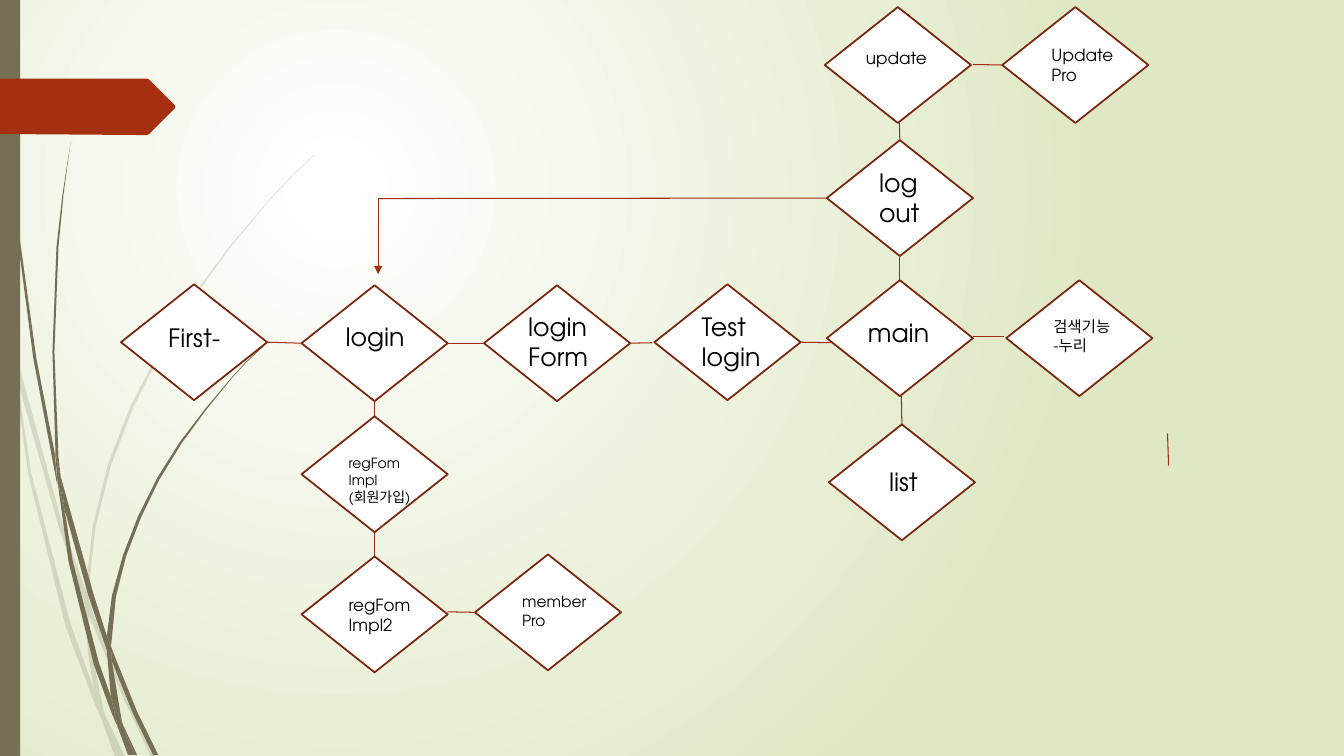
from lxml import etree
from pptx import Presentation
from pptx.dml.color import RGBColor
from pptx.enum.shapes import MSO_CONNECTOR, MSO_SHAPE
from pptx.enum.text import MSO_AUTO_SIZE
from pptx.oxml.ns import qn
from pptx.util import Inches, Pt

DIAMOND = MSO_SHAPE.FLOWCHART_DECISION
BAR = MSO_SHAPE.RECTANGLE
STRAIGHT = MSO_CONNECTOR.STRAIGHT
GROW = MSO_AUTO_SIZE.SHAPE_TO_FIT_TEXT
TOP, LEFT, BOTTOM, RIGHT = range(4)
FONT = "TeX Gyre Adventor"
OLIVE = "766F54"


def paint(color_format, hex_color):
    color_format.rgb = RGBColor.from_string(hex_color)


def fill_outline(points, hex_color):
    """Draw a closed, borderless outline through points given in inches."""
    corners = [(Inches(x), Inches(y)) for x, y in points]
    builder = slide.shapes.build_freeform(*corners[0])
    builder.add_line_segments(corners[1:], close=True)
    outline = builder.convert_to_shape()
    outline.shadow.inherit = False
    outline.fill.solid()
    paint(outline.fill.fore_color, hex_color)
    outline.line.fill.background()
    return outline


prs = Presentation()
prs.slide_width, prs.slide_height = Inches(13.33), Inches(7.5)
slide = prs.slides.add_slide(prs.slide_layouts[6])

# Background: radial gradient centred in the upper left
backdrop = slide.background.fill
backdrop.gradient()
for stop, hex_color in zip(backdrop.gradient_stops, ("FFFFFF", "DFE8C4")):
    paint(stop.color, hex_color)
gradient = slide.background._cSld.find(".//" + qn("a:gradFill"))
gradient.remove(gradient.find(qn("a:lin")))
radial = etree.SubElement(gradient, qn("a:path"), path="circle")
etree.SubElement(radial, qn("a:fillToRect"), l="50000", t="50000", r="100000", b="100000")

# Grass: each blade is a closed run of (x, y) points
pale_blades = [
    [(0.11, 3.5), (0.09, 3.22), (0, 2.82), (0, 2.99), (0.1, 3.44)],
    [(0.58, 5.22), (0.84, 5.99), (0.85, 5.86), (0.62, 5.2), (0.14, 3.45), (0.17, 3.76)],
    [(0.92, 6.07), (0.88, 5.96), (0.88, 6.1), (1.23, 6.94), (1.5, 7.51), (1.55, 7.51),
     (1.27, 6.92)],
    [(1.19, 7.51), (1.24, 7.51), (1.05, 7.11)],
    [(0.93, 6.83), (0.7, 6.19), (0.31, 4.69), (0.17, 3.76), (0.11, 3.5), (0.28, 4.7),
     (0.65, 6.21), (0.92, 6.93), (1.01, 7.14), (0.99, 7.07)],
    [(0.84, 5.99), (0.87, 6.46), (0.93, 6.83), (0.96, 6.92), (1.05, 7.11), (1.03, 7.06),
     (0.91, 6.46), (0.88, 6.1), (0.88, 6.08)],
    [(0.88, 5.84), (0.95, 5.22), (1.1, 4.62), (1.32, 4.05), (1.6, 3.49), (1.92, 2.96),
     (2.29, 2.45), (2.68, 1.98), (2.9, 1.75), (3.12, 1.54), (3.12, 1.53), (2.89, 1.75),
     (2.68, 1.97), (2.28, 2.44), (1.9, 2.95), (1.58, 3.48), (1.29, 4.04), (1.07, 4.61),
     (0.92, 5.22), (0.85, 5.84), (0.85, 5.86), (0.88, 5.96)],
    [(1.01, 7.14), (1.14, 7.51), (1.19, 7.51)],
    [(0.88, 6.08), (0.88, 6.1), (0.88, 5.96), (0.85, 5.86), (0.84, 5.99)],
    [(0.96, 6.92), (0.93, 6.83), (0.99, 7.07), (1.01, 7.14), (1.19, 7.51), (1.05, 7.11)],
]
dark_blades = [
    [(0.07, 1.1), (0.17, 2.33), (0.33, 3.55), (0.56, 4.77), (0.57, 4.81), (0.55, 4.57),
     (0.55, 4.53), (0.36, 3.55), (0.19, 2.32), (0.08, 1.09), (0.05, 0.48), (0.04, 0),
     (0.03, 0), (0.04, 0.48)],
    [(0.88, 5.92), (1.06, 6.45), (1.06, 6.33), (1.06, 6.31), (0.93, 5.9), (0.6, 4.72),
     (0.64, 5.05)],
    [(1.13, 6.49), (1.1, 6.41), (1.11, 6.56), (1.32, 7.08), (1.52, 7.49), (1.57, 7.49),
     (1.36, 7.06)],
    [(1.1, 6.91), (0.98, 6.57), (0.72, 5.56), (0.64, 5.05), (0.57, 4.77), (0.68, 5.57),
     (0.93, 6.59), (1.11, 7.08), (1.17, 7.22), (1.16, 7.17)],
    [(0.6, 4.72), (0.58, 4.53), (0.54, 3.49), (0.58, 2.45), (0.63, 1.93), (0.7, 1.41),
     (0.62, 1.93), (0.56, 2.45), (0.52, 3.49), (0.55, 4.49)],
    [(1.33, 7.49), (1.36, 7.49), (1.22, 7.19)],
    [(0.57, 4.77), (0.64, 5.05), (0.6, 4.72), (0.55, 4.49), (0.55, 4.53)],
    [(1.11, 6.33), (1.15, 5.92), (1.25, 5.52), (1.4, 5.13), (1.58, 4.76), (1.8, 4.4),
     (2.05, 4.06), (2.31, 3.74), (2.45, 3.59), (2.61, 3.44), (2.6, 3.44), (2.45, 3.58),
     (2.31, 3.73), (2.04, 4.05), (1.78, 4.39), (1.56, 4.74), (1.37, 5.12), (1.22, 5.51),
     (1.11, 5.91), (1.06, 6.31), (1.1, 6.41)],
    [(1.17, 7.22), (1.27, 7.49), (1.31, 7.49)],
    [(1.06, 6.45), (1.1, 6.91), (1.16, 7.06), (1.22, 7.19), (1.21, 7.16), (1.11, 6.56),
     (1.09, 6.51)],
    [(1.06, 6.45), (1.09, 6.51), (1.11, 6.56), (1.1, 6.41), (1.06, 6.31), (1.06, 6.33)],
    [(1.16, 7.06), (1.1, 6.91), (1.16, 7.17), (1.17, 7.22), (1.3, 7.49), (1.33, 7.49),
     (1.22, 7.19)],
]
for blade in pale_blades:
    pale_fill = fill_outline(blade, OLIVE)._element.spPr.find(".//" + qn("a:srgbClr"))
    etree.SubElement(pale_fill, qn("a:alpha"), val="20000")
for blade in dark_blades:
    fill_outline(blade, OLIVE)

side_bar = slide.shapes.add_shape(BAR, 0, 0, Inches(0.2), Inches(7.5))
side_bar.shadow.inherit = False
side_bar.fill.solid()
paint(side_bar.fill.fore_color, OLIVE)
side_bar.line.fill.background()

fill_outline([(1.73, 1.08), (1.48, 1.33), (1.46, 1.34), (1.36, 1.34), (0, 1.33), (0, 0.78),
              (1.36, 0.78), (1.46, 0.78), (1.48, 0.79), (1.73, 1.04), (1.74, 1.06)], "A53010")

# Pages: name, diamond left and top, text left, top and height, size, lines
pages = [
    ("first", 1.2, 2.82, 1.57, 3.15, 0.29, 18, ["First-"]),
    ("login", 2.99, 2.83, 3.33, 3.14, 0.71, 18, ["login"]),
    ("member pro", 4.71, 5.5, 5.08, 5.83, 0.47, 11, ["memberPro"]),
    ("logout", 8.2, 1.39, 8.62, 1.61, 0.71, 18, ["log", "out"]),
    ("register", 2.99, 4.13, 3.36, 4.46, 0.61, 10, ["regFom", "Impl", "(회원가입)"]),
    ("login form", 4.8, 2.83, 5.14, 3.04, 0.71, 18, ["login", "Form"]),
    ("test login", 6.49, 2.82, 6.86, 3.04, 0.71, 18, ["Test", "login"]),
    ("main", 8.2, 2.78, 8.51, 3.1, 0.4, 18, ["main"]),
    ("register 2", 2.99, 5.52, 3.36, 5.85, 0.5, 12, ["regFom", "Impl2"]),
    ("update", 8.18, 0.07, 8.49, 0.42, 0.3, 12, ["update"]),
    ("update pro", 9.94, 0.07, 10.33, 0.39, 0.5, 12, ["Update", "Pro"]),
    ("search", 9.98, 2.78, 10.35, 3.1, 0.47, 11, ["검색기능", "-누리"]),
    ("list", 8.22, 4.21, 8.72, 4.58, 0.4, 18, ["list"]),
]
diamonds = {}
for name, left, top, text_left, text_top, text_height, size, lines in pages:
    diamond = slide.shapes.add_shape(
        DIAMOND, Inches(left), Inches(top), Inches(1.45), Inches(1.15))
    diamond.shadow.inherit = False
    diamond.fill.solid()
    paint(diamond.fill.fore_color, "FFFFFF")
    paint(diamond.line.color, "7A240C")
    diamond.line.width = Pt(1.25)
    diamonds[name] = diamond

    label = slide.shapes.add_textbox(
        Inches(text_left), Inches(text_top), Inches(0.86), Inches(text_height))
    frame = label.text_frame
    frame.word_wrap = True
    frame.auto_size = GROW
    for number, line in enumerate(lines):
        paragraph = frame.add_paragraph() if number else frame.paragraphs[0]
        run = paragraph.add_run()
        run.text = line
        run.font.name = FONT
        run.font.size = Pt(size)
        paint(run.font.color, "000000")

# Links: each end is a (page, side) pair or a free (x, y) point
links = [
    (("logout", LEFT), (3.75, 1.97)),
    ((3.75, 1.97), (3.75, 2.72)),
    (("logout", BOTTOM), ("main", TOP)),
    ((8.92, 1.22), ("logout", TOP)),
    (("update pro", LEFT), (9.65, 0.64)),
    (("test login", RIGHT), (8.25, 3.4)),
    ((6.47, 3.4), ("login form", RIGHT)),
    (("login form", LEFT), ("login", RIGHT)),
    (("login", BOTTOM), ("register", TOP)),
    (("register", BOTTOM), ("register 2", TOP)),
    (("member pro", LEFT), (4.44, 6.07)),
    (("login", LEFT), ("first", RIGHT)),
    ((11.58, 4.3), (11.59, 4.62)),
    ((9.65, 3.34), (9.96, 3.34)),
    ((8.94, 3.92), ("list", TOP)),
]
arrow_link = links[1]
for link in links:
    start, end = link
    (x1, y1), (x2, y2) = [(0, 0) if point[0] in diamonds else point for point in link]
    connector = slide.shapes.add_connector(
        STRAIGHT, Inches(x1), Inches(y1), Inches(x2), Inches(y2))
    if start[0] in diamonds:
        connector.begin_connect(diamonds[start[0]], start[1])
    if end[0] in diamonds:
        connector.end_connect(diamonds[end[0]], end[1])
    paint(connector.line.color, "9E2E0F")
    connector.line.width = Pt(0.75)
    properties = connector._element.spPr
    if link is arrow_link:
        etree.SubElement(properties.find(qn("a:ln")), qn("a:tailEnd"), type="triangle")
    etree.SubElement(properties, qn("a:effectLst"))

prs.save("out.pptx")
